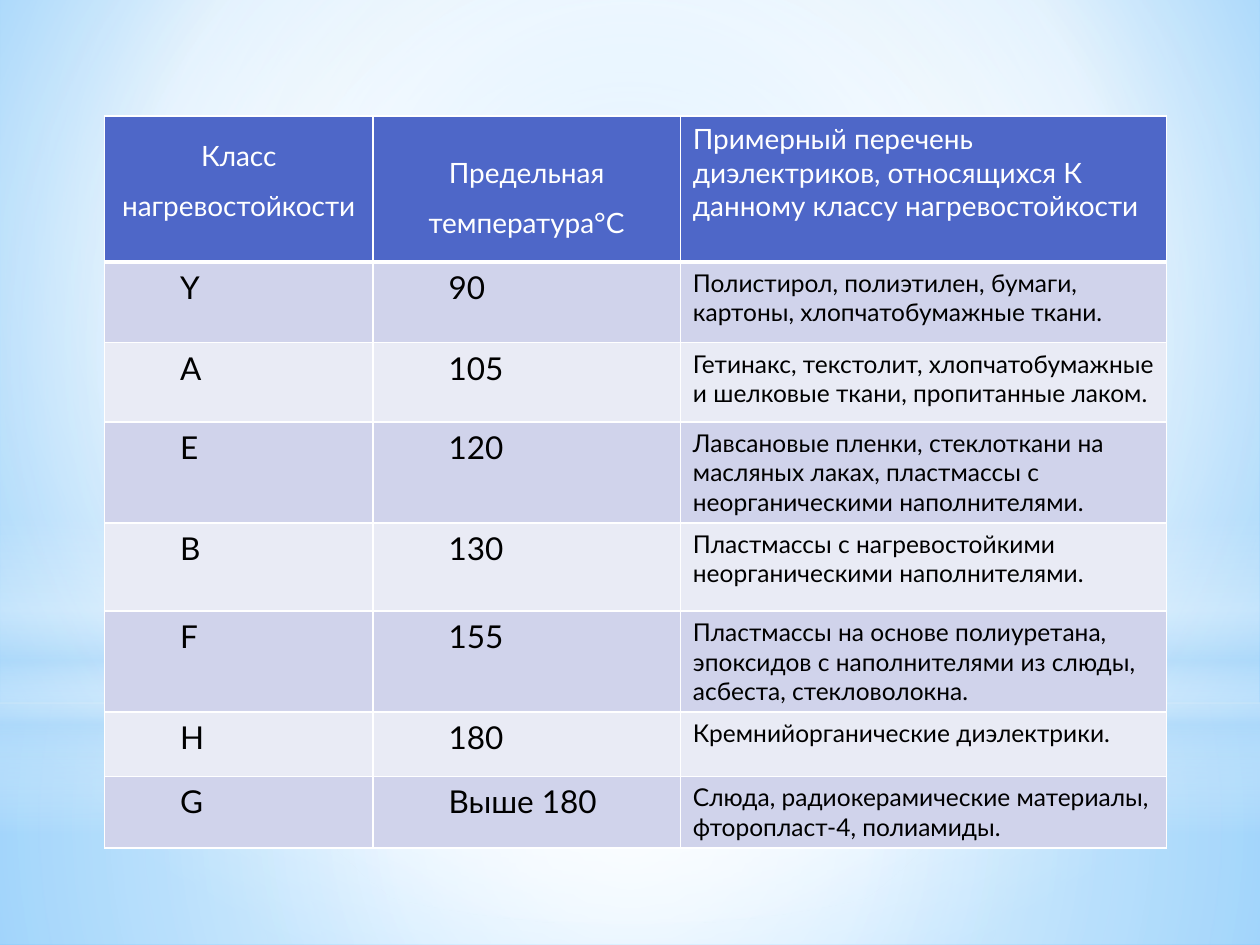
from lxml.etree import SubElement
from pptx import Presentation
from pptx.dml.color import RGBColor
from pptx.enum.shapes import MSO_SHAPE as Preset
from pptx.enum.text import MSO_ANCHOR as Anchor, PP_ALIGN as Align
from pptx.oxml import parse_xml
from pptx.oxml.ns import nsdecls, qn
from pptx.util import Inches, Pt

COLORS = {
    "white": "FFFFFF",
    "black": "000000",
    "header": "4E67C8",
    "band_dark": "D0D3EB",
    "band_light": "E9EBF5",
    "sky": "9ED5FF",
    "deep_sky": "5BB9FF",
    "haze": "B4DCFA",
}
CENTER = (50, 50, 50, 50)

HEADINGS = [
    "Класс нагревостойкости",
    "Предельная температура°С",
    "Примерный перечень диэлектриков, относящихся К данному классу нагревостойкости",
]
CLASSES = [
    ("Y", "90", "Полистирол, полиэтилен, бумаги, картоны, хлопчатобумажные ткани."),
    ("A", "105", "Гетинакс, текстолит, хлопчатобумажные и шелковые ткани, пропитанные лаком."),
    ("E", "120", "Лавсановые пленки, стеклоткани на масляных лаках, пластмассы с неорганическими наполнителями."),
    ("B", "130", "Пластмассы с нагревостойкими неорганическими наполнителями."),
    ("F", "155", "Пластмассы на основе полиуретана, эпоксидов с наполнителями из слюды, асбеста, стекловолокна."),
    ("H", "180", "Кремнийорганические диэлектрики."),
    ("G", "Выше 180", "Слюда, радиокерамические материалы, фторопласт-4, полиамиды."),
]
COLUMN_WIDTHS = [2.13, 2.44, 3.86]
ROW_HEIGHTS = [1.16, 0.64, 0.63, 0.8, 0.7, 0.8, 0.51, 0.57]


def write_text(frame, text, size, color, font, align=Align.LEFT, spacing=None, indent=0):
    paragraph = frame.paragraphs[0]
    paragraph.alignment = align
    if spacing:
        paragraph.line_spacing = spacing
    if indent:
        paragraph.level = 1
        properties = paragraph._p.get_or_add_pPr()
        properties.set("marL", str(Inches(indent)))
        properties.set("indent", "0")
    run = paragraph.add_run()
    run.text = text
    run.font.size = Pt(size)
    run.font.name = font
    run.font.color.rgb = RGBColor.from_string(COLORS[color])


def set_gradient(owner, fill, stops, focus=None):
    fill.gradient()
    gradient = owner.xpath(".//a:gradFill")[0]
    stop_xml = "".join(
        f'<a:gs pos="{position * 1000}"><a:srgbClr val="{COLORS[color]}">'
        f'<a:alpha val="{alpha * 1000}"/></a:srgbClr></a:gs>'
        for position, color, alpha in stops
    )
    if focus:
        left, top, right, bottom = (value * 1000 for value in focus)
        direction = (
            f'<a:path path="circle"><a:fillToRect l="{left}" t="{top}" '
            f'r="{right}" b="{bottom}"/></a:path>'
        )
    else:
        direction = '<a:lin ang="5400000" scaled="0"/>'
    new_gradient = parse_xml(
        f'<a:gradFill {nsdecls("a")} rotWithShape="1">'
        f"<a:gsLst>{stop_xml}</a:gsLst>{direction}</a:gradFill>"
    )
    gradient.getparent().replace(gradient, new_gradient)


class SlideBuilder:
    def __init__(self, slide, font="Lato"):
        self.slide = slide
        self.font = font

    def background(self, stops, focus):
        set_gradient(self.slide.element, self.slide.background.fill, stops, focus)

    def glow(self, preset, top, height, stops, focus=None):
        shape = self.slide.shapes.add_shape(
            preset, 0, Inches(top), Inches(10), Inches(height)
        )
        shape.shadow.inherit = False
        shape.line.fill.background()
        set_gradient(shape.element, shape.fill, stops, focus)

    def borders(self, cell, **widths):
        properties = cell._tc.get_or_add_tcPr()
        for side in "LRTB":
            line = SubElement(properties, qn(f"a:ln{side}"))
            line.set("w", str(Pt(widths.get(side, 1))))
            fill = SubElement(line, qn("a:solidFill"))
            SubElement(fill, qn("a:srgbClr")).set("val", COLORS["white"])

    def cell(self, cell, text, fill, widths, anchor=Anchor.TOP, **text_format):
        self.borders(cell, **widths)
        cell.fill.solid()
        cell.fill.fore_color.rgb = RGBColor.from_string(COLORS[fill])
        cell.vertical_anchor = anchor
        write_text(cell.text_frame, text, font=self.font, **text_format)

    def table(self, left, top):
        table = self.slide.shapes.add_table(
            len(ROW_HEIGHTS), len(COLUMN_WIDTHS), Inches(left), Inches(top),
            Inches(sum(COLUMN_WIDTHS)), Inches(sum(ROW_HEIGHTS)),
        ).table
        for column, width in zip(table.columns, COLUMN_WIDTHS):
            column.width = Inches(width)
        for row, height in zip(table.rows, ROW_HEIGHTS):
            row.height = Inches(height)

        for index, heading in enumerate(HEADINGS):
            text_format = {} if index == 2 else {"align": Align.CENTER, "spacing": 1.5}
            anchor = Anchor.MIDDLE if index == 1 else Anchor.TOP
            self.cell(table.cell(0, index), heading, "header", {"B": 3}, anchor,
                      size=16, color="white", **text_format)

        for row, values in enumerate(CLASSES, 1):
            fill = "band_dark" if row % 2 else "band_light"
            widths = {"T": 3} if row == 1 else {}
            for column, value in enumerate(values):
                text_format = {"size": 14} if column == 2 else {"size": 18, "indent": 0.5}
                self.cell(table.cell(row, column), value, fill, widths,
                          color="black", **text_format)


def main():
    presentation = Presentation()
    presentation.slide_width = Inches(10)
    presentation.slide_height = Inches(7.5)
    builder = SlideBuilder(presentation.slides.add_slide(presentation.slide_layouts[6]))

    builder.background(
        [(0, "sky", 100), (60, "white", 100), (100, "deep_sky", 100)], (20, 10, 20, 60)
    )
    builder.glow(Preset.RECTANGLE, 5.58, 1.92,
                 [(0, "white", 91), (37, "white", 76), (100, "haze", 79)], CENTER)
    builder.glow(Preset.RECTANGLE, 0, 5.58,
                 [(0, "white", 89), (48, "white", 62), (100, "haze", 79)], CENTER)
    builder.glow(Preset.RECTANGLE, 4.12, 2.5,
                 [(0, "white", 0), (29, "white", 30), (45, "haze", 40),
                  (55, "white", 26), (65, "haze", 60), (100, "white", 0)])
    builder.glow(Preset.OVAL, 1.75, 5.58,
                 [(0, "white", 100), (56, "white", 0)], CENTER)
    builder.table(0.83, 0.92)
    presentation.save("out.pptx")


if __name__ == "__main__":
    main()
